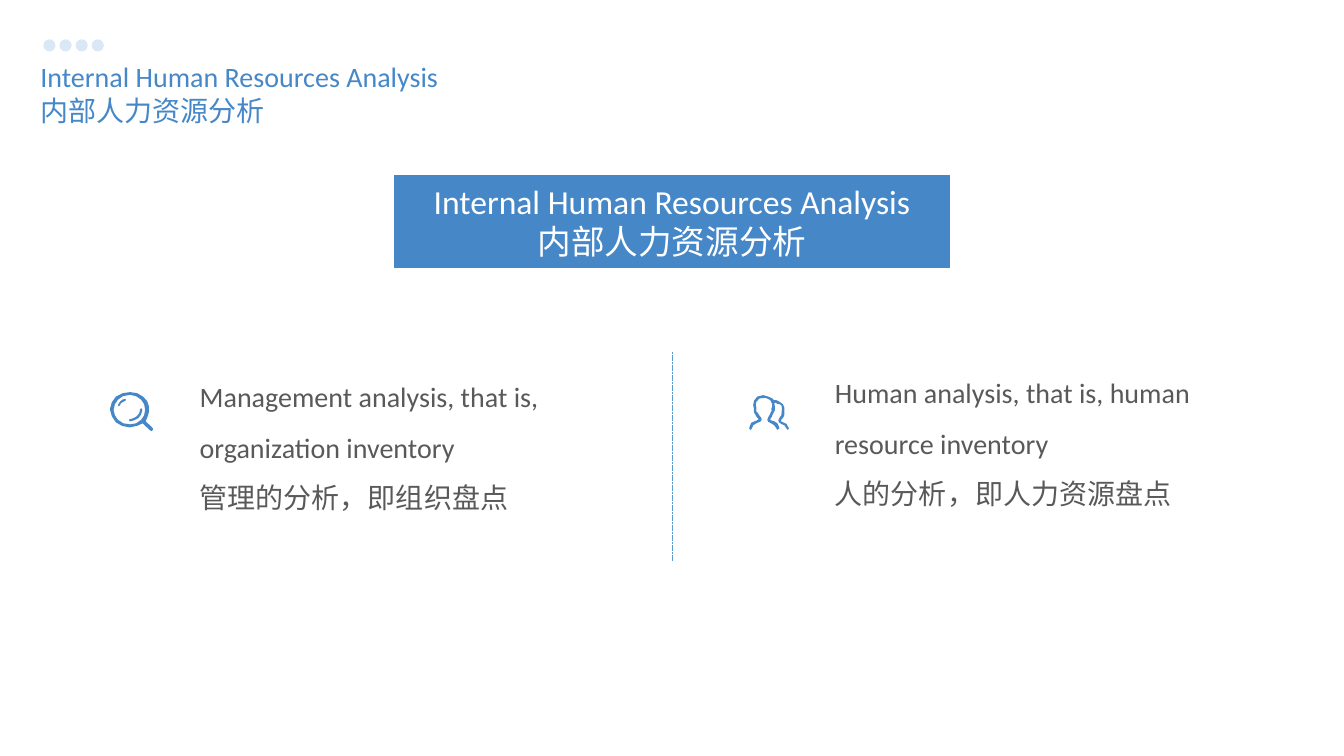
import pptx
import pptx.util
import pptx.dml.color
import pptx.enum.dml
import pptx.enum.shapes
import pptx.enum.text
import pptx.oxml.ns
import pptx.oxml.xmlchemy

HUE = {"blue": "4687C8", "grey": "595959", "white": "FFFFFF", "rule": "5B9BD5"}
HEAD = ["Internal Human Resources Analysis", "内部人力资源分析"]
ITEMS = [
    (["Management analysis, that is, organization inventory", "管理的分析，即组织盘点"],
     (1.88, 3.55, 4.87, 1.56)),
    (["Human analysis, that is, human resource inventory", "人的分析，即人力资源盘点"],
     (8.18, 3.51, 3.84, 1.56)),
]
DOTS = 4
WIDE, HIGH = 13.33, 7.5

PEOPLE = [[
    (30, 33), (28, 34.5), (27, 33), (25, 30), (21, 27.5), (19, 26.5), (18, 24.5),
    (19, 22), (20.5, 19.5), (21.5, 17), (22.5, 16), (22, 14), (23, 10.5), (22.5, 8),
    (21, 5), (19, 4), (17, 3), (14, 2.8), (10, 3.5), (7, 7), (6.7, 10), (7.3, 13),
    (7, 16), (8.5, 17.5), (10, 20), (12, 22.5), (12.5, 24.5), (11, 26.5), (8, 27.5),
    (4, 30), (2.8, 33), (1.4, 34.5), (0, 33), (2, 27.5), (8, 25), (9.5, 24),
    (7, 21), (6, 19), (4.7, 17), (4.7, 13), (4, 10), (5, 5.5), (8, 1.5), (14, 0),
    (19, 1.5), (23, 3.3), (24.5, 5), (27, 5), (30, 6.5), (33.5, 9), (35, 12.5),
    (35, 16), (35, 19.5), (34, 22), (31.5, 25), (32, 26.3), (37, 28.5), (39.5, 33),
    (38.3, 34.5), (37, 33), (35, 30), (32, 28.7), (29.5, 27), (29, 25), (30.5, 22),
    (32, 20), (32.3, 17), (32.5, 13), (32, 10), (30, 9), (28, 8.7), (26, 7.5),
    (25, 8), (25.5, 11), (25.5, 15), (23.5, 19), (22.5, 21.5), (20.8, 24),
    (21.5, 25), (25, 26), (28, 28), (29.5, 31)]]
LENS = [
    [(42, 35), (35.5, 29), (37.5, 24), (38.7, 20), (38.7, 14), (37, 9), (33, 4.5),
     (27, 1), (20, 0), (13, 1), (6, 4.5), (2, 10), (0, 17), (2, 24), (6, 30), (12, 33.5),
     (19.5, 35), (27, 33.5), (32.5, 31), (40, 38), (41.5, 38.7), (43, 37)],
    [(31, 27.5), (26, 31), (20, 32), (13.5, 31), (8, 27.5), (5, 23), (3.7, 17.5),
     (5, 12), (8, 7.5), (13, 4), (20, 2.7), (26, 4), (31, 7.5), (34, 12), (35, 17.5), (34, 23)],
    [(15, 6.7), (12.5, 7.5), (10.5, 9), (9, 11), (8, 13), (9, 14), (10, 13),
     (11, 11), (13, 9.7), (15.5, 8.5), (16, 7.5)],
    [(31, 16), (30, 17), (29.5, 20), (28, 22.5), (26, 24.5), (23, 26), (19.5, 27),
     (19, 28), (20, 29), (24, 28), (28, 26), (30.5, 23), (32, 19), (32, 16.7)],
]
ICONS = [(LENS, 1.09, 3.89), (PEOPLE, 7.43, 3.92)]


def rgb(name):
    return pptx.dml.color.RGBColor.from_string(HUE[name])


def node(tag):
    return pptx.oxml.xmlchemy.OxmlElement(tag)


def put(obj, vals):
    for key, val in vals.items():
        setattr(obj, key, val)


def place(shape, box):
    sides = ("left", "top", "width", "height")
    put(shape, dict(zip(sides, map(pptx.util.Inches, box))))


def paint(shape, hue):
    shape.shadow.inherit = False
    shape.fill.solid()
    shape.fill.fore_color.rgb = rgb(hue)
    shape.line.fill.background()


def write(shape, lines, size, hue, align, lead=1, anchor="TOP", wrap=True):
    frame = shape.text_frame
    put(frame, {"word_wrap": wrap,
                "auto_size": pptx.enum.text.MSO_AUTO_SIZE.NONE,
                "vertical_anchor": getattr(pptx.enum.text.MSO_ANCHOR, anchor)})
    for i, line in enumerate(lines):
        para = frame.add_paragraph() if i else frame.paragraphs[0]
        put(para, {"alignment": getattr(pptx.enum.text.PP_ALIGN, align),
                   "line_spacing": lead, "space_before": pptx.util.Pt(0)})
        props = para._p.get_or_add_pPr()
        props.set("marL", "0")
        props.set("indent", "0")
        props.append(node("a:buNone"))
        run = para.add_run()
        run.text = line
        put(run.font, {"name": "Calibri", "size": pptx.util.Pt(size)})
        run.font.color.rgb = rgb(hue)


def draw(shapes, loops, left, top):
    fine = [[(x * 10, y * 10) for x, y in loop] for loop in loops]
    pen = shapes.build_freeform(*fine[0][0], scale=pptx.util.Inches(0.001))
    for i, loop in enumerate(fine):
        if i:
            pen.move_to(*loop[0])
        pen.add_line_segments(loop[1:], close=True)
    icon = pen.convert_to_shape(pptx.util.Inches(left), pptx.util.Inches(top))
    paint(icon, "blue")


def main():
    deck = pptx.Presentation()
    put(deck, {"slide_width": pptx.util.Inches(WIDE), "slide_height": pptx.util.Inches(HIGH)})
    slide = deck.slides.add_slide(deck.slide_layouts[3])
    shapes = slide.shapes
    kinds = pptx.enum.shapes.MSO_SHAPE

    place(shapes.title, (0.3, 0.54, 4.28, 1.11))
    write(shapes.title, HEAD, 20, "blue", "LEFT", wrap=False)

    for i in range(DOTS):
        dot = shapes.add_shape(kinds.OVAL, 0, 0, 0, 0)
        place(dot, (0.43 + i * 0.16, 0.39, 0.12, 0.12))
        paint(dot, "blue")
        tint = dot._element.spPr.find(".//" + pptx.oxml.ns.qn("a:srgbClr"))
        alpha = node("a:alpha")
        alpha.set("val", "20000")
        tint.append(alpha)

    for i, (lines, box) in enumerate(ITEMS, 1):
        body = slide.placeholders[i]
        place(body, box)
        write(body, lines, 20, "grey", "LEFT", lead=1.5)

    for loops, left, top in ICONS:
        draw(shapes, loops, left, top)

    banner = shapes.add_shape(kinds.RECTANGLE, 0, 0, 0, 0)
    place(banner, ((WIDE - 5.51) / 2, 1.74, 5.51, 0.91))
    paint(banner, "blue")
    banner.line.color.rgb = rgb("blue")
    banner.line.width = pptx.util.Pt(0.75)
    write(banner, HEAD, 24, "white", "CENTER", anchor="MIDDLE")

    ends = map(pptx.util.Inches, (WIDE / 2, 3.49, WIDE / 2, 5.57))
    rule = shapes.add_connector(pptx.enum.shapes.MSO_CONNECTOR.STRAIGHT, *ends)
    rule.line.color.rgb = rgb("rule")
    put(rule.line, {"width": pptx.util.Pt(0.25),
                    "dash_style": pptx.enum.dml.MSO_LINE.SQUARE_DOT})
    rule._element.spPr.append(node("a:effectLst"))

    deck.save("out.pptx")


if __name__ == "__main__":
    main()
